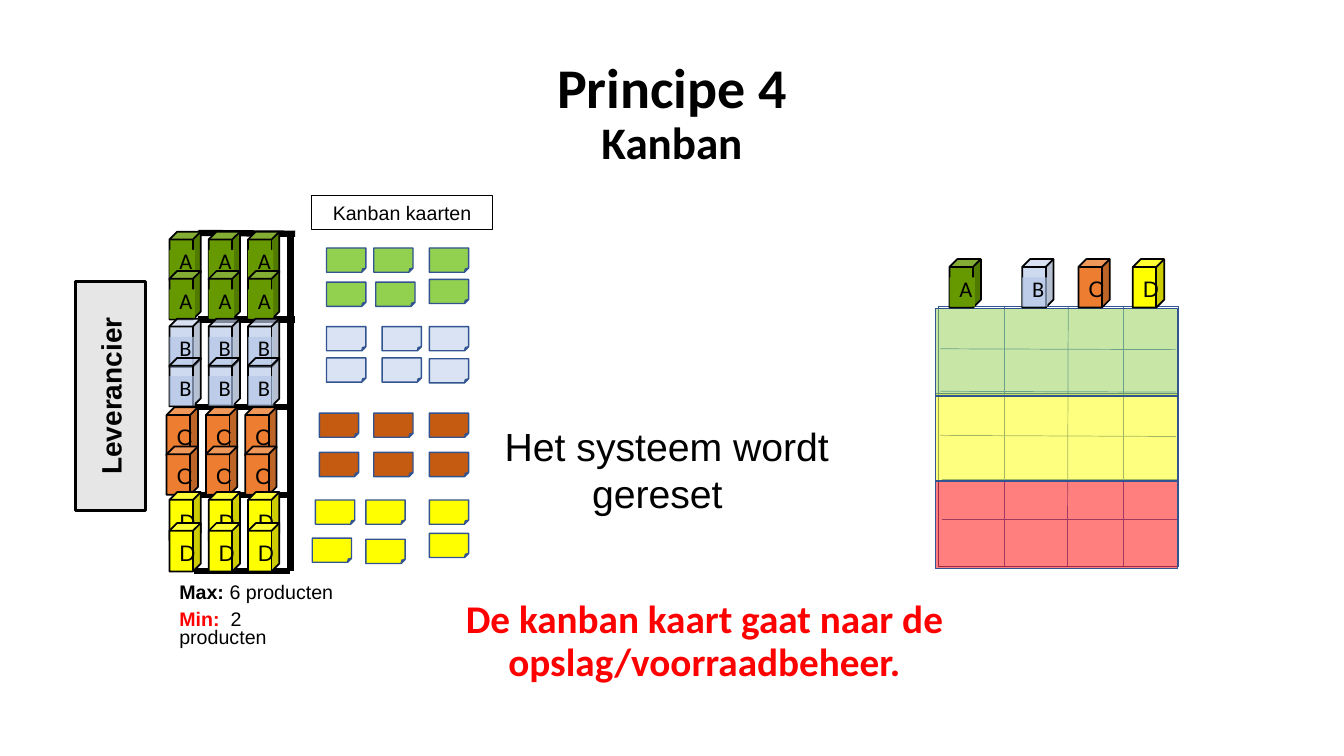
import pptx
import pptx.util
import pptx.dml.color
import pptx.enum.shapes
import pptx.enum.text
import pptx.oxml.ns
import lxml.etree

Cm = pptx.util.Cm
Pt = pptx.util.Pt
RGB = pptx.dml.color.RGBColor.from_string
SHAPE = pptx.enum.shapes.MSO_SHAPE
ALIGN = pptx.enum.text.PP_ALIGN
ANCHOR = pptx.enum.text.MSO_ANCHOR
qn = pptx.oxml.ns.qn

COLORS = {
    "black": "000000", "red": "FF0000", "yellow": "FFFF00", "lime": "92D050",
    "green": "669900", "blue": "B4C7E7", "pale_blue": "DAE3F3", "orange": "ED7D31",
    "rust": "C55A11", "gray": "E7E6E6", "outline": "325491", "grid": "4472C4",
}


def draw_shape(shapes, kind, left, top, width, height, fill=None, line=None, weight=1, opacity=100):
    shape = shapes.add_shape(kind, Cm(left), Cm(top), Cm(width), Cm(height))
    shape.shadow.inherit = False
    if fill:
        shape.fill.solid()
        shape.fill.fore_color.rgb = RGB(COLORS[fill])
        if opacity < 100:
            color = shape._element.spPr.find(qn("a:solidFill"))[0]
            lxml.etree.SubElement(color, qn("a:alpha")).set("val", str(opacity * 1000))
    else:
        shape.fill.background()
    if line:
        shape.line.color.rgb = RGB(COLORS[line])
        shape.line.width = Pt(weight)
    else:
        shape.line.fill.background()
    return shape


def write_text(box, text, size, font, color="black", bold=False, align=ALIGN.CENTER,
               spacing=None, anchor=ANCHOR.TOP):
    frame = box.text_frame
    frame.text = text
    frame.word_wrap = True
    frame.vertical_anchor = anchor
    for para in frame.paragraphs:
        para.alignment = align
        para.line_spacing = spacing
        for span in para.runs:
            span.font.size = Pt(size)
            span.font.name = font
            span.font.bold = bold
            span.font.color.rgb = RGB(COLORS[color])
    return frame


deck = pptx.Presentation()
deck.slide_width = Cm(33.87)
deck.slide_height = Cm(19.05)
page = deck.slides.add_slide(deck.slide_layouts[5])

title = page.shapes.title
title.left, title.top, title.width, title.height = Cm(0), Cm(1.22), Cm(33.87), Cm(3.33)
frame = write_text(title, "Principe 4\nKanban", 40, "Calibri", bold=True, spacing=0.9,
                   anchor=ANCHOR.MIDDLE)
frame.auto_size = pptx.enum.text.MSO_AUTO_SIZE.NONE
frame.paragraphs[0].space_before = Pt(0)
frame.paragraphs[1].space_before = Pt(0)
frame.paragraphs[1].runs[0].font.size = Pt(32.2)

shelf_lines = [
    (5, 5.87, 7.44, 5.89), (4.88, 14.38, 7.32, 14.38), (4.88, 12.47, 7.32, 12.47),
    (4.88, 10.26, 7.32, 10.26), (5, 8.05, 7.44, 8.05), (7.32, 5.87, 7.32, 14.38),
]
stock_lines = [
    (23.7, 8.79, 29.64, 8.81), (23.7, 9.86, 29.64, 9.88), (23.7, 10.97, 29.64, 11),
    (25.32, 7.72, 25.32, 14.27), (26.92, 7.72, 26.9, 14.27), (28.3, 7.72, 28.3, 14.27),
    (23.75, 12.09, 29.69, 12.09), (23.75, 13.08, 29.69, 13.08),
]
for lines, color, weight in [(shelf_lines, "black", 4.5), (stock_lines, "grid", 0.5)]:
    for ends in lines:
        connector = page.shapes.add_connector(
            pptx.enum.shapes.MSO_CONNECTOR.STRAIGHT, *[Cm(value) for value in ends])
        connector.line.color.rgb = RGB(COLORS[color])
        connector.line.width = Pt(weight)
        lxml.etree.SubElement(connector._element.spPr, qn("a:effectLst"))

draw_shape(page.shapes, SHAPE.RECTANGLE, 23.65, 7.72, 6.05, 6.55, line="outline")
for top, height, fill in [(12.14, 2.18, "red"), (9.91, 2.21, "yellow"), (7.77, 2.21, "lime")]:
    draw_shape(page.shapes, SHAPE.RECTANGLE, 23.57, top, 6.1, height, fill, "outline", opacity=50)

products = [
    ("A", "green", 100, "Calibri", 4.27, (5.84, 6.83), 23.93),
    ("B", "blue", 65, "Calibri", 4.27, (8.03, 9.02), 25.76),
    ("C", "orange", 100, "Arial", 4.2, (10.26, 11.25), 27.18),
    ("D", "yellow", 100, "Arial", 4.27, (12.4, 13.18), 28.55),
]
for letter, fill, opacity, font, first_left, tops, stock_left in products:
    places = [(first_left + 0.99 * column, top) for top in tops for column in range(3)]
    for left, top in places + [(stock_left, 6.53)]:
        product = page.shapes.add_group_shape().shapes
        draw_shape(product, SHAPE.CUBE, left, top, 0.79, 1.22, fill, "black", 1.25, opacity)
        label_fill = fill if letter in "AB" else None
        label = draw_shape(product, SHAPE.RECTANGLE, left, top + 0.46, 0.64, 0.74,
                           label_fill, opacity=opacity)
        write_text(label, letter, 16, font, spacing=0.7)

cards = {
    "lime": [(8.23, 6.25), (9.42, 6.25), (10.82, 6.25), (8.23, 7.11), (9.47, 7.11), (10.82, 7.04)],
    "pale_blue": [(8.23, 8.23), (9.63, 8.23), (10.82, 8.23), (8.23, 9.02), (9.63, 9.02), (10.82, 9.04)],
    "rust": [(8.05, 10.41), (9.42, 10.41), (10.82, 10.41), (8.05, 11.4), (9.42, 11.4), (10.82, 11.4)],
    "yellow": [(7.95, 12.6), (9.22, 12.6), (10.82, 12.6), (7.87, 13.56), (9.22, 13.59), (10.82, 13.44)],
}
for fill, places in cards.items():
    for left, top in places:
        draw_shape(page.shapes, SHAPE.FOLDED_CORNER, left, top, 0.99, 0.61, fill, "outline")

supplier = draw_shape(page.shapes, SHAPE.RECTANGLE, -0.1, 9.09, 5.77, 1.78, "gray", "black", 2.25)
supplier.rotation = 270
write_text(supplier, "Leverancier", 20, "Arial", bold=True, anchor=ANCHOR.MIDDLE)

cards_label = draw_shape(page.shapes, SHAPE.RECTANGLE, 7.85, 4.93, 4.57, 0.86, line="black")
write_text(cards_label, "Kanban kaarten", 14, "Arial")

limits = page.shapes.add_textbox(Cm(4.27), Cm(14.63), Cm(4.39), Cm(1.4))
frame = write_text(limits, "Max: \nMin: ", 14, "Arial", bold=True, align=ALIGN.LEFT, spacing=Pt(13))
for para, amount in zip(frame.paragraphs, ["6 producten", " 2 producten"]):
    para.space_after = Pt(6)
    span = para.add_run()
    span.text = amount
    span.font.size = Pt(14)
    span.font.name = "Arial"
    span.font.color.rgb = RGB(COLORS["black"])
frame.paragraphs[1].runs[0].font.color.rgb = RGB(COLORS["red"])

message = page.shapes.add_textbox(Cm(7.92), Cm(14.99), Cm(19.41), Cm(2.39))
message.left, message.width = Cm(11), Cm(13.5)
write_text(message, "De kanban kaart gaat naar de opslag/voorraadbeheer.", 28, "Calibri",
           "red", True, spacing=0.9)

reset = page.shapes.add_textbox(Cm(12.47), Cm(10.52), Cm(9.07), Cm(2.64))
frame = write_text(reset, "Het systeem wordt\ngereset", 28, "Arial", align=ALIGN.LEFT)
frame.paragraphs[1]._p.get_or_add_pPr().set("marL", str(Cm(2.2)))

deck.save("out.pptx")
